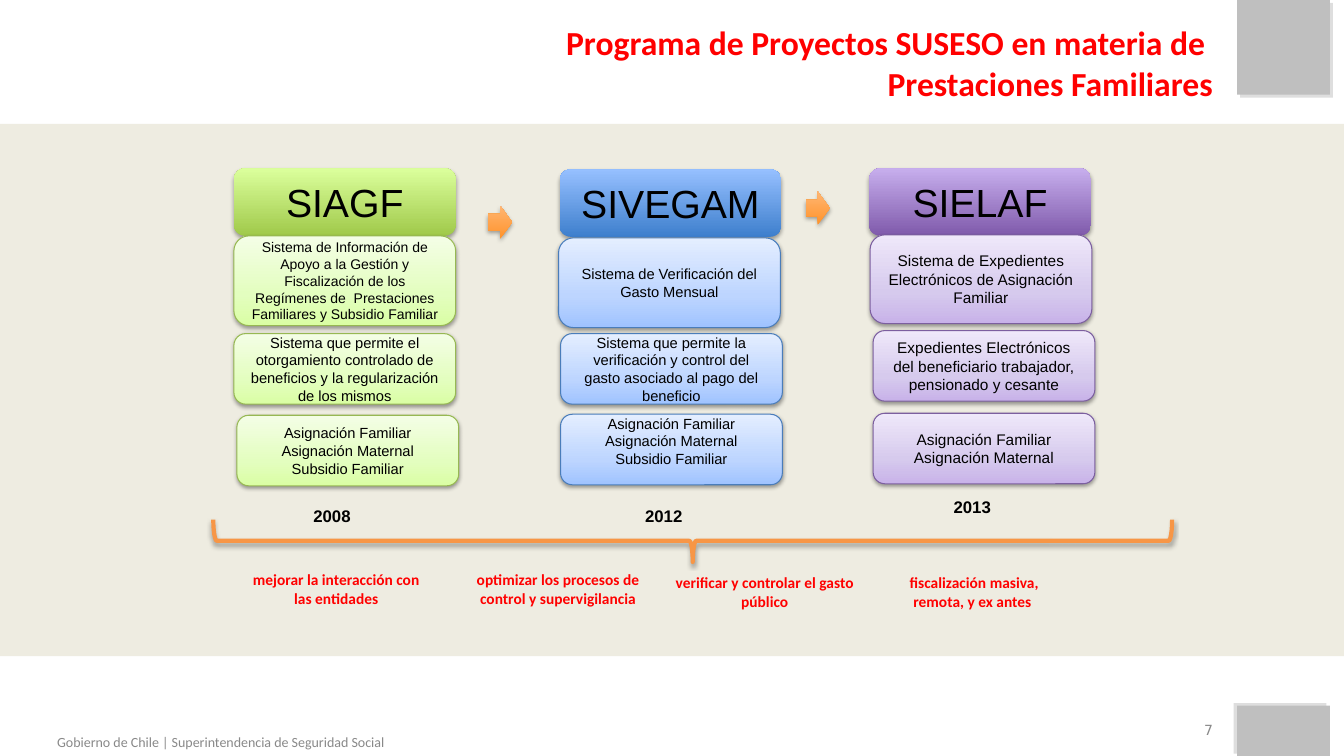
from collections import namedtuple

from lxml.etree import SubElement
from pptx import Presentation
from pptx.dml.color import RGBColor
from pptx.enum.shapes import MSO_SHAPE as Shape
from pptx.enum.text import MSO_ANCHOR as Anchor, MSO_AUTO_SIZE as AutoSize, PP_ALIGN as Align
from pptx.oxml.ns import qn
from pptx.util import Emu, Pt

SCALE = 9144
Box = namedtuple("Box", "left top width height")
Theme = namedtuple("Theme", "header body edge")
Card = namedtuple("Card", "box text size bottom", defaults=(5,))
Shadow = namedtuple("Shadow", "color alpha blur distance angle")

BLACK = RGBColor(0x00, 0x00, 0x00)
RED = RGBColor(0xFF, 0x00, 0x00)
GRAY = RGBColor(0x89, 0x89, 0x89)
SHADE = RGBColor(0x80, 0x80, 0x80)
CORNER_GRAY = RGBColor(0xBF, 0xBF, 0xBF)
SAND = RGBColor(0xEE, 0xEC, 0xE1)
ORANGE = RGBColor(0xF7, 0x96, 0x46)
ARROW_STOPS = {0: RGBColor(0xFF, 0x93, 0x2B), 100: RGBColor(0xFF, 0xB6, 0x73)}
GREEN_THEME = Theme(
    {0: RGBColor(0xA0, 0xC9, 0x4A), 100: RGBColor(0xDB, 0xFF, 0x9C)},
    {0: RGBColor(0xDA, 0xFE, 0xA4), 35: RGBColor(0xE3, 0xFE, 0xBF), 100: RGBColor(0xF4, 0xFE, 0xE6)},
    RGBColor(0x97, 0xB8, 0x53))
BLUE_THEME = Theme(
    {0: RGBColor(0x3E, 0x7F, 0xCD), 100: RGBColor(0x96, 0xC0, 0xFF)},
    {0: RGBColor(0x9F, 0xC3, 0xFF), 35: RGBColor(0xBD, 0xD5, 0xFF), 100: RGBColor(0xE4, 0xEE, 0xFF)},
    RGBColor(0x4A, 0x7D, 0xBA))
PURPLE_THEME = Theme(
    {0: RGBColor(0x7F, 0x5A, 0xAB), 100: RGBColor(0xC7, 0xAE, 0xED)},
    {0: RGBColor(0xC8, 0xB2, 0xE9), 35: RGBColor(0xD6, 0xCA, 0xED), 100: RGBColor(0xEF, 0xE8, 0xFA)},
    RGBColor(0x7C, 0x5F, 0x9F))
SOLID_SHADOW = Shadow(BLACK, 35, 3.1, 1.8, 90)
CARD_SHADOW = Shadow(BLACK, 37, 3.1, 1.6, 90)

COLUMNS = [
    (Box(232, 167, 220, 67), "SIAGF", GREEN_THEME, [
        Card(Box(0, 67, 220, 89), "Sistema de Información de Apoyo a la Gestión y Fiscalización de los "
             "Regímenes de  Prestaciones Familiares y Subsidio Familiar", 10),
        Card(Box(0, 164, 220, 70), "Sistema que permite el otorgamiento controlado de beneficios "
             "y la regularización de los mismos", 10.5),
        Card(Box(3, 245, 220, 70), "Asignación Familiar\nAsignación Maternal\nSubsidio Familiar", 10.5)],
     Box(69, 330, 57, 30), "2008"),
    (Box(555, 168, 220, 67), "SIVEGAM", BLUE_THEME, [
        Card(Box(-1, 68, 220, 89), "Sistema de Verificación del Gasto Mensual", 10.5),
        Card(Box(1, 163, 220, 70), "Sistema que permite la verificación y control del gasto "
             "asociado al pago del beneficio", 10.5),
        Card(Box(1, 243, 220, 70), "Asignación Familiar\nAsignación Maternal\nSubsidio Familiar", 10.5, 22)],
     Box(75, 329, 57, 30), "2012"),
    (Box(862, 167, 220, 67), "SIELAF", PURPLE_THEME, [
        Card(Box(1, 66, 220, 88), "Sistema de Expedientes Electrónicos de Asignación Familiar", 11),
        Card(Box(4, 161, 220, 70), "Expedientes Electrónicos del beneficiario trabajador, "
             "pensionado y cesante", 11),
        Card(Box(4, 243, 220, 70), "Asignación Familiar\nAsignación Maternal", 11)],
     Box(74, 321, 57, 30), "2013"),
]
GOALS = [
    (0, 0, "mejorar la interacción con las entidades"),
    (220, 0, "optimizar los procesos de control y supervigilancia"),
    (425, 3, "verificar y controlar el gasto público"),
    (631, 3, " fiscalización masiva, remota, y ex antes"),
]


def emu(box):
    """Turn a box in px into EMU lengths."""
    return [Emu(length * SCALE) for length in box]


def inside(outer, inner):
    """Place a relative box in its outer box."""
    return inner._replace(left=outer.left + inner.left, top=outer.top + inner.top)


def write(shape, text, size=11, font="Arial", color=BLACK, bold=False, align=Align.CENTER,
          anchor=Anchor.MIDDLE, wrap=True, bottom=5, fit=AutoSize.NONE):
    """Write formatted text in a shape."""
    frame = shape.text_frame
    frame.text = text
    frame.word_wrap = wrap
    frame.auto_size = fit
    frame.vertical_anchor = anchor
    frame.margin_left = frame.margin_right = Emu(10 * SCALE)
    frame.margin_top, frame.margin_bottom = Emu(5 * SCALE), Emu(bottom * SCALE)
    for para in frame.paragraphs:
        para.alignment = align
        for span in para.runs:
            span.font.size, span.font.name, span.font.bold = Pt(size), font, bold
            span.font.color.rgb = color


def add_label(page, box, text, **style):
    """Add a text box."""
    write(page.shapes.add_textbox(*emu(box)), text, **style)


def set_shadow(shape, shadow):
    """Give a shape an outer shadow."""
    shape.shadow.inherit = False
    effects = shape._element.spPr.find(qn("a:effectLst"))
    outer = SubElement(effects, qn("a:outerShdw"), blurRad=str(Pt(shadow.blur)),
                       dist=str(Pt(shadow.distance)), dir=str(shadow.angle * 60000),
                       algn="ctr", rotWithShape="0")
    color = SubElement(outer, qn("a:srgbClr"), val=str(shadow.color))
    SubElement(color, qn("a:alpha"), val=str(shadow.alpha * 1000))


def set_gradient(shape, stops):
    """Fill a shape with colour stops from bottom to top."""
    shape.fill.gradient()
    shape.fill.gradient_angle = 90
    stop_list = shape._element.spPr.find(".//" + qn("a:gsLst"))
    for stop in list(stop_list):
        stop_list.remove(stop)
    for position, color in stops.items():
        stop = SubElement(stop_list, qn("a:gs"), pos=str(position * 1000))
        SubElement(stop, qn("a:srgbClr"), val=str(color))


def add_block(page, kind, box, fill=None, stops=None, edge=None, weight=0.75, shadow=None):
    """Add a preset shape with its fill, line and shadow."""
    shape = page.shapes.add_shape(kind, *emu(box))
    if stops:
        set_gradient(shape, stops)
    elif fill is not None:
        shape.fill.solid()
        shape.fill.fore_color.rgb = fill
    else:
        shape.fill.background()
    if edge is None:
        shape.line.fill.background()
    else:
        shape.line.color.rgb = edge
        shape.line.width = Pt(weight)
    if shadow:
        set_shadow(shape, shadow)
    else:
        shape.shadow.inherit = False
    return shape


def add_corner(page, box, angle):
    """Add a plain corner block."""
    add_block(page, Shape.RECTANGLE, box, fill=CORNER_GRAY, shadow=Shadow(SHADE, 25, 0, 3, angle))


def add_title(page, box):
    """Place the slide title."""
    title = page.shapes.title
    title.left, title.top, title.width, title.height = emu(box)
    write(title, "Programa de Proyectos SUSESO en materia de \vPrestaciones Familiares",
          size=24, font="Calibri", color=RED, bold=True, align=Align.RIGHT, anchor=Anchor.TOP)


def add_system(page, box, name, theme, cards, year_box, year):
    """Add a system column: header, cards and year."""
    header = add_block(page, Shape.ROUNDED_RECTANGLE, box, stops=theme.header, shadow=SOLID_SHADOW)
    write(header, name, size=28)
    for card in cards:
        shape = add_block(page, Shape.ROUNDED_RECTANGLE, inside(box, card.box), stops=theme.body,
                          edge=theme.edge, shadow=CARD_SHADOW)
        write(shape, card.text, size=card.size, bottom=card.bottom)
    add_label(page, inside(box, year_box), year, size=12, bold=True, align=Align.LEFT,
              anchor=Anchor.TOP, wrap=False, fit=AutoSize.SHAPE_TO_FIT_TEXT)


def add_goals(page, box):
    """Add the brace and the goals under it."""
    middle, center = box.left + box.width // 2, box.top + 21
    brace_box = Box(middle - 21, center - box.width // 2, 42, box.width)
    brace = add_block(page, Shape.RIGHT_BRACE, brace_box, edge=ORANGE, weight=3, shadow=SOLID_SHADOW)
    brace.rotation = 90
    for left, top, text in GOALS:
        add_label(page, inside(box, Box(19 + left, 46 + top, 205, 47)), text, font="Calibri",
                  color=RED, bold=True, anchor=Anchor.TOP, fit=AutoSize.SHAPE_TO_FIT_TEXT)


def add_footer(page, box):
    """Add the institution name and the page number."""
    add_label(page, inside(box, Box(0, 4, 391, 36)), "Gobierno de Chile | Superintendencia de Seguridad Social",
              size=10, font="Calibri", color=GRAY, align=Align.RIGHT)
    add_label(page, inside(box, Box(902, 0, 311, 21)), "7", size=10, font="DejaVu Sans",
              color=GRAY, align=Align.RIGHT)


def main():
    """Build and save the slide."""
    deck = Presentation()
    deck.slide_width, deck.slide_height = Emu(1333 * SCALE), Emu(750 * SCALE)
    page = deck.slides.add_slide(deck.slide_layouts[5])
    add_corner(page, Box(1227, 0, 92, 94), 45)
    add_corner(page, Box(1227, 700, 92, 50), 215)
    band = add_block(page, Shape.PENTAGON, Box(0, 123, 1333, 528), fill=SAND)
    band.adjustments[0] = 0
    add_title(page, Box(22, 17, 1191, 125))
    for column in COLUMNS:
        add_system(page, *column)
    for left, top in [(484, 204), (799, 190)]:
        add_block(page, Shape.RIGHT_ARROW, Box(left, top, 24, 33), stops=ARROW_STOPS, shadow=SOLID_SHADOW)
    add_goals(page, Box(212, 515, 951, 96))
    add_footer(page, Box(0, 714, 1333, 36))
    deck.save("out.pptx")


if __name__ == "__main__":
    main()
